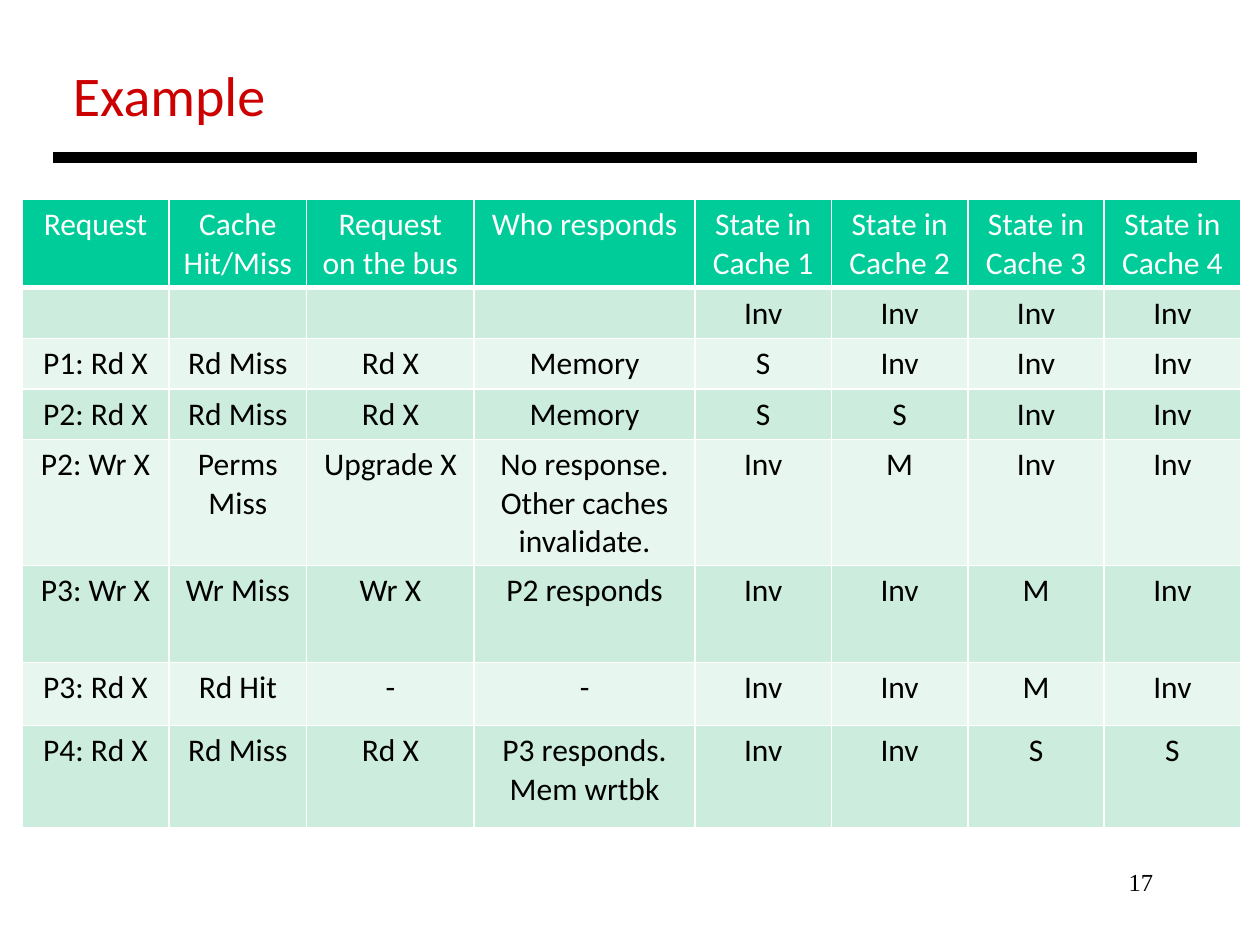
from dataclasses import dataclass

from lxml.etree import SubElement
from pptx import Presentation
from pptx.dml.color import RGBColor
from pptx.enum.shapes import MSO_CONNECTOR
from pptx.enum.text import MSO_AUTO_SIZE, PP_ALIGN
from pptx.oxml.ns import qn
from pptx.util import Cm, Pt


@dataclass(frozen=True)
class Theme:
    title: str = "CC0000"
    ink: str = "000000"
    paper: str = "FFFFFF"
    header: str = "00CC99"
    bands: tuple = ("CCECDE", "E7F6EF")
    sans: str = "Calibri"
    serif: str = "Times New Roman"
    title_size: float = 32
    body_size: float = 18
    number_size: float = 14
    rule_width: float = 6
    border: float = 1
    header_border: float = 3


@dataclass(frozen=True)
class Label:
    text: str
    left: float
    top: float
    width: float
    height: float
    fmt: dict
    align: PP_ALIGN
    wrap: bool
    fit: MSO_AUTO_SIZE


@dataclass(frozen=True)
class Row:
    height: float
    cells: tuple


THEME = Theme()


def font_format(name: str, size: float, color: str) -> dict:
    return {"name": name, "size": Pt(size), "bold": False,
            "color": RGBColor.from_string(color)}


LABELS = (
    Label("17", 18.21, 17.35, 5.29, 1.27,
          font_format(THEME.serif, THEME.number_size, THEME.ink),
          PP_ALIGN.RIGHT, True, MSO_AUTO_SIZE.NONE),
    Label("Example", 1.22, 1.09, 4.45, 1.62,
          font_format(THEME.sans, THEME.title_size, THEME.title),
          PP_ALIGN.LEFT, False, MSO_AUTO_SIZE.SHAPE_TO_FIT_TEXT),
)

COLUMNS = (2.97, 2.77, 3.38, 4.45) + (2.75,) * 4
ROWS = (
    Row(1.78, ("Request", "Cache\nHit/Miss", "Request\non the bus", "Who responds",
               *(f"State in Cache {n}" for n in range(1, 5)))),
    Row(1.02, ("", "", "", "", "Inv", "Inv", "Inv", "Inv")),
    Row(1.02, ("P1: Rd X", "Rd Miss", "Rd X", "Memory", "S", "Inv", "Inv", "Inv")),
    Row(1.02, ("P2: Rd X", "Rd Miss", "Rd X", "Memory", "S", "S", "Inv", "Inv")),
    Row(2.54, ("P2: Wr X", "Perms Miss", "Upgrade X",
               "No response.\nOther caches invalidate.", "Inv", "M", "Inv", "Inv")),
    Row(1.95, ("P3: Wr X", "Wr Miss", "Wr X", "P2 responds", "Inv", "Inv", "M", "Inv")),
    Row(1.27, ("P3: Rd X", "Rd Hit", "-", "-", "Inv", "Inv", "M", "Inv")),
    Row(2.06, ("P4: Rd X", "Rd Miss", "Rd X", "P3 responds. Mem wrtbk",
               "Inv", "Inv", "S", "S")),
)


def write(tf, text: str, fmt: dict, align: PP_ALIGN) -> None:
    tf.text = text
    for p in tf.paragraphs:
        p.alignment = align
        for key, value in fmt.items():
            if key == "color":
                p.font.color.rgb = value
            else:
                setattr(p.font, key, value)
        for r in p.runs:
            for key, value in fmt.items():
                if key == "color":
                    r.font.color.rgb = value
                else:
                    setattr(r.font, key, value)


def draw_label(slide, label: Label) -> None:
    sp = slide.shapes.add_textbox(Cm(label.left), Cm(label.top),
                                  Cm(label.width), Cm(label.height))
    tf = sp.text_frame
    tf.word_wrap = label.wrap
    tf.auto_size = label.fit
    write(tf, label.text, label.fmt, label.align)


def draw_rule(slide) -> None:
    line = slide.shapes.add_connector(MSO_CONNECTOR.STRAIGHT,
                                      Cm(1.06), Cm(3.18), Cm(24.13), Cm(3.18))
    line.line.width = Pt(THEME.rule_width)
    line.line.color.rgb = RGBColor.from_string(THEME.ink)
    SubElement(line._element.spPr, qn("a:effectLst"))


def draw_borders(cell, bottom: float) -> None:
    tc_pr = cell._tc.get_or_add_tcPr()
    widths = {"L": THEME.border, "R": THEME.border, "T": THEME.border, "B": bottom}
    for side, width in widths.items():
        ln = SubElement(tc_pr, qn(f"a:ln{side}"), w=str(Pt(width)))
        fill = SubElement(ln, qn("a:solidFill"))
        SubElement(fill, qn("a:srgbClr"), val=THEME.paper)


def draw_table(slide) -> None:
    table = slide.shapes.add_table(
        len(ROWS), len(COLUMNS), Cm(0.44), Cm(4.02),
        Cm(sum(COLUMNS)), Cm(sum(row.height for row in ROWS))).table
    for column, width in zip(table.columns, COLUMNS):
        column.width = Cm(width)
    for i, row in enumerate(ROWS):
        header = i == 0
        table.rows[i].height = Cm(row.height)
        fill = THEME.header if header else THEME.bands[(i - 1) % 2]
        fmt = font_format(THEME.sans, THEME.body_size,
                          THEME.paper if header else THEME.ink)
        for cell, text in zip(table.rows[i].cells, row.cells):
            draw_borders(cell, THEME.header_border if header else THEME.border)
            cell.fill.solid()
            cell.fill.fore_color.rgb = RGBColor.from_string(fill)
            write(cell.text_frame, text, fmt, PP_ALIGN.CENTER)


def main() -> None:
    prs = Presentation()
    prs.slide_width, prs.slide_height = Cm(25.4), Cm(19.05)
    slide = prs.slides.add_slide(prs.slide_layouts[6])
    for label in LABELS:
        draw_label(slide, label)
    draw_rule(slide)
    draw_table(slide)
    prs.save("out.pptx")


if __name__ == "__main__":
    main()
